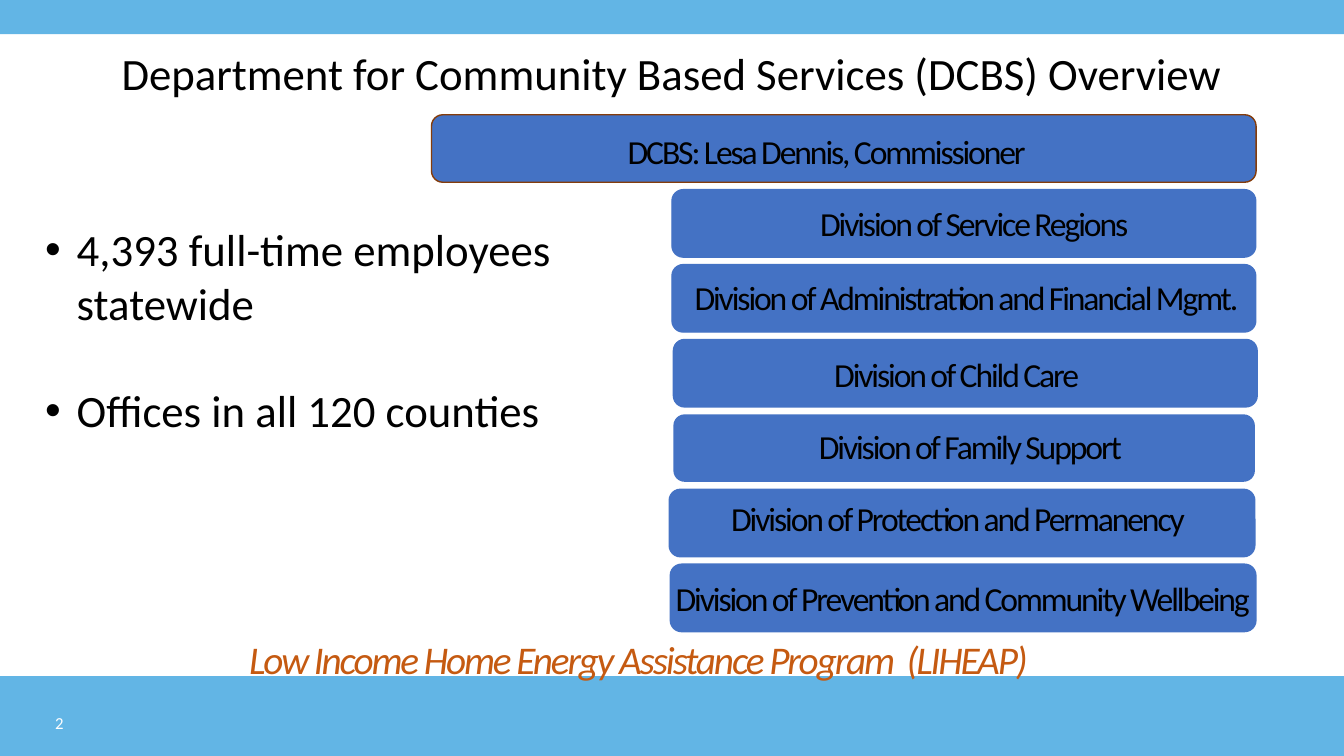
from dataclasses import dataclass

from lxml.etree import SubElement
from pptx import Presentation
from pptx.dml.color import RGBColor
from pptx.enum.shapes import MSO_SHAPE as Kind
from pptx.enum.text import MSO_ANCHOR as Anchor, PP_ALIGN as Align
from pptx.oxml.ns import qn
from pptx.shapes.autoshape import Shape
from pptx.util import Pt

SKY, BLUE, BROWN = "62B5E5", "4472C4", "843C0B"
BLACK, WHITE, RUST = "000000", "FFFFFF", "C55A11"
WIDE, TALL = 960, 540
TOP, STEP, BAR_H = 82, 53.5, 48.2


@dataclass
class Bar:
    label: str
    left: float
    width: float
    text_left: float
    text_width: float
    drop: float  # label box top below bar top
    edge: str = BLUE


BARS = [
    Bar("DCBS: Lesa Dennis, Commissioner", 308.2, 589, 275.8, 629.3, 8, BROWN),
    Bar("Division of Service Regions", 480, 417, 466.5, 458.6, 5.6),
    Bar("Division of Administration and Financial Mgmt.", 480, 417, 455.8, 468.7, 5.4),
    Bar("Division of Child Care", 481, 417, 463.7, 439.2, 6.6),
    Bar("Division of Family Support", 481, 415.4, 491.8, 402.5, 5, ""),
    Bar("Division of Protection and Permanency", 478, 418.3, 478, 412.5, 2.6),
    Bar("Division of Prevention and Community Wellbeing", 478.8, 418.3, 462.2, 450.7, 6),
]
FACTS = ["4,393 full-time employees statewide", "Offices in all 120 counties"]

deck = Presentation()
deck.slide_width, deck.slide_height = Pt(WIDE), Pt(TALL)
slide = deck.slides.add_slide(deck.slide_layouts[6])


def color(code: str) -> RGBColor:
    return RGBColor.from_string(code)


def block(kind: Kind, left: float, top: float, width: float, height: float,
          fill: str, edge: str = "") -> Shape:
    shape = slide.shapes.add_shape(kind, Pt(left), Pt(top), Pt(width), Pt(height))
    shape.shadow.inherit = False
    shape.fill.solid()
    shape.fill.fore_color.rgb = color(fill)
    if edge:
        shape.line.color.rgb = color(edge)
        shape.line.width = Pt(1)
    else:
        shape.line.fill.background()
    return shape


def write(text: str, left: float, top: float, width: float, height: float,
          size: float, ink: str = BLACK, align: Align = Align.CENTER,
          anchor: Anchor = Anchor.TOP, track: float = 0) -> Shape:
    box = slide.shapes.add_textbox(Pt(left), Pt(top), Pt(width), Pt(height))
    frame = box.text_frame
    frame.word_wrap = True
    frame.vertical_anchor = anchor
    frame.text = text
    for para in frame.paragraphs:
        para.alignment = align
        for run in para.runs:
            run.font.name, run.font.size = "Calibri", Pt(size)
            run.font.color.rgb = color(ink)
            if track:
                run.font._element.set("spc", str(round(track * 100)))
    return box


# Bands at the top and bottom
block(Kind.RECTANGLE, 0, 483, WIDE, 57, SKY)
block(Kind.RECTANGLE, 0, 0, WIDE, 24.4, SKY)

# Title
title = write("Department for Community Based Services (DCBS) Overview",
              66, 28.8, 828, 50.4, 32, anchor=Anchor.MIDDLE)
title.text_frame.paragraphs[0].line_spacing = 0.9

# Program line
program = write("Low Income Home Energy Assistance Program  (LIHEAP)",
                120, 450, 672, 90, 28, RUST, track=-1.5)
program.text_frame.paragraphs[0].runs[0].font.italic = True

# Department and its divisions
for row, bar in enumerate(BARS):
    top = TOP + row * STEP
    block(Kind.ROUNDED_RECTANGLE, bar.left, top, bar.width, BAR_H, BLUE, bar.edge)
    write(bar.label, bar.text_left, top + bar.drop, bar.text_width, 36, 24, track=-1.5)

# Facts
facts = write("\n".join(FACTS), 25.2, 154.8, 423.4, 162.7, 32, align=Align.LEFT)
for row, para in enumerate(facts.text_frame.paragraphs):
    props = para._p.get_or_add_pPr()
    props.set("marL", str(Pt(22.5)))
    props.set("indent", str(-Pt(22.5)))
    if row:
        para.space_before = Pt(38.5)
    SubElement(props, qn("a:buFont"), typeface="Arial")
    SubElement(props, qn("a:buChar"), char="•")

# Slide number
write("2", 14.4, 501.8, 38.2, 28.8, 12, WHITE, Align.RIGHT, Anchor.MIDDLE)

deck.save("out.pptx")
